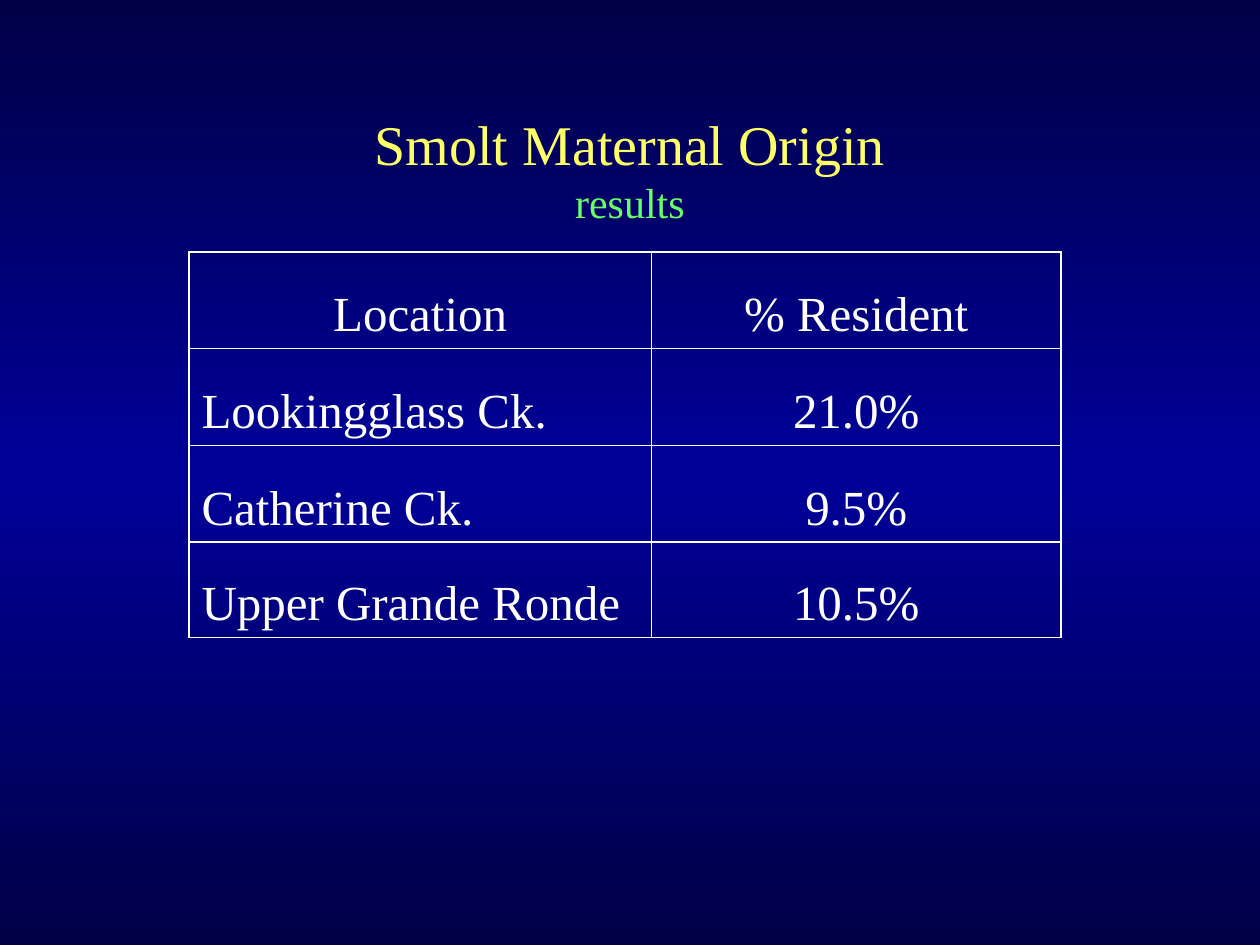
import copy
import dataclasses
import pptx
import pptx.dml.color
import pptx.enum.text
import pptx.oxml
import pptx.oxml.ns
import pptx.util

Cm = pptx.util.Cm
Pt = pptx.util.Pt
RGB = pptx.dml.color.RGBColor.from_string
Align = pptx.enum.text.PP_ALIGN
Anchor = pptx.enum.text.MSO_ANCHOR


@dataclasses.dataclass(frozen=True)
class Theme:
    """Hold the colours, font and type sizes of the slide."""
    font: str = "Times New Roman"
    edge: str = "000046"
    glow: str = "000099"
    head: str = "FFFF66"
    note: str = "66FF66"
    ink: str = "FFFFFF"
    big: int = 32
    mid: int = 28
    small: int = 24


THEME = Theme()
ROWS = [
    ("Location", "% Resident"),
    ("Lookingglass Ck.", "21.0%"),
    ("Catherine Ck.", "9.5%"),
    ("Upper Grande Ronde", "10.5%"),
]


def write(para, text, *, size, color, align=Align.CENTER, before=0):
    """Put formatted text into a paragraph."""
    para.alignment = align
    para.space_before = Pt(before)
    run = para.add_run()
    run.text = text
    run.font.name = THEME.font
    run.font.size = Pt(size)
    run.font.color.rgb = RGB(color)


def paint(slide):
    """Fill the background with a vertical three-stop gradient."""
    fill = slide.background.fill
    fill.gradient()
    fill.gradient_angle = 90
    stops = next(slide.element.iter(pptx.oxml.ns.qn("a:gsLst")))
    stops.insert(1, copy.deepcopy(stops[0]))
    colors = (THEME.edge, THEME.glow, THEME.edge)
    for stop, color, place in zip(fill.gradient_stops, colors, (0, 0.5, 1)):
        stop.color.rgb = RGB(color)
        stop.position = place


def title(slide):
    """Set the heading and its second line in the title placeholder."""
    box = slide.shapes.title
    box.left, box.top, box.width, box.height = Cm(1.9), Cm(2.33), Cm(21.6), Cm(2.12)
    frame = box.text_frame
    frame.word_wrap = True
    frame.auto_size = pptx.enum.text.MSO_AUTO_SIZE.NONE
    frame.vertical_anchor = Anchor.MIDDLE
    write(frame.paragraphs[0], "Smolt Maternal Origin", size=THEME.big, color=THEME.head)
    write(frame.add_paragraph(), "results", size=THEME.small, color=THEME.note)


def border(cell):
    """Draw a thin line on all four sides of a cell."""
    props = cell._tc.get_or_add_tcPr()
    for i, side in enumerate("LRTB"):
        line = pptx.oxml.parse_xml(
            f'<a:ln{side} {pptx.oxml.ns.nsdecls("a")} w="{Pt(1)}"><a:solidFill>'
            f'<a:srgbClr val="{THEME.ink}"/></a:solidFill></a:ln{side}>')
        props.insert(i, line)


def grid(slide, rows):
    """Add the table of locations and resident shares."""
    frame = slide.shapes.add_table(
        len(rows), 2, Cm(3.81), Cm(5.08), Cm(17.58), Cm(7.78))
    table = frame.table
    table.first_row = table.horz_banding = False
    for col, width in zip(table.columns, (9.32, 8.26)):
        col.width = Cm(width)
    for r, row in enumerate(rows):
        table.rows[r].height = Cm(1.92 if r == len(rows) - 1 else 1.95)
        for c, text in enumerate(row):
            cell = table.cell(r, c)
            cell.fill.background()
            cell.vertical_anchor = Anchor.BOTTOM
            border(cell)
            align = Align.LEFT if r and not c else Align.CENTER
            write(cell.text_frame.paragraphs[0], text, size=THEME.mid,
                  color=THEME.ink, align=align, before=5.6)


def main():
    """Build and save the slide."""
    deck = pptx.Presentation()
    deck.slide_width, deck.slide_height = Cm(25.4), Cm(19.05)
    slide = deck.slides.add_slide(deck.slide_layouts[5])
    paint(slide)
    title(slide)
    grid(slide, ROWS)
    deck.save("out.pptx")


if __name__ == "__main__":
    main()
